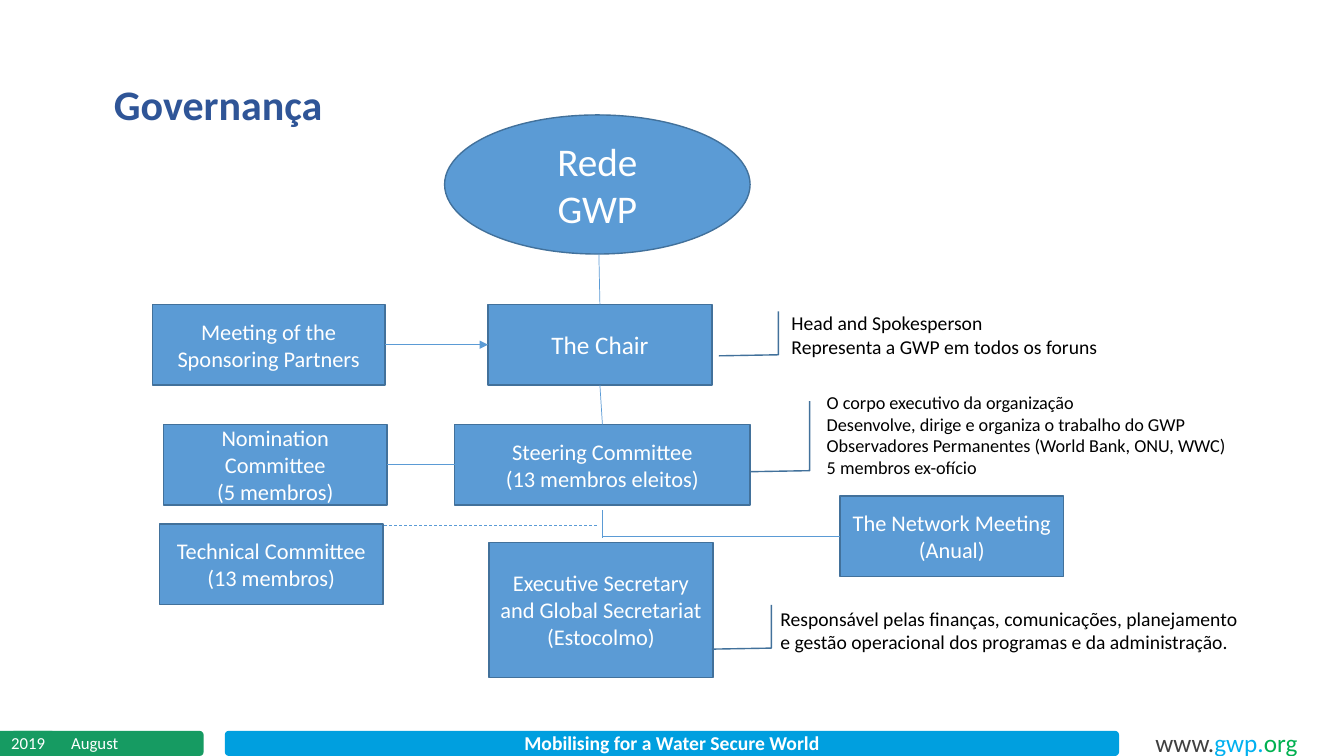
from lxml.etree import SubElement
from pptx import Presentation
from pptx.dml.color import RGBColor
from pptx.enum.dml import MSO_LINE
from pptx.enum.shapes import MSO_CONNECTOR, MSO_SHAPE
from pptx.enum.text import MSO_ANCHOR, PP_ALIGN
from pptx.oxml.ns import qn
from pptx.util import Inches, Pt

# Content
TITLE = "Governança"
SLOGAN = "Mobilising for a Water Secure World"
URL = [("www.", "404040"), ("gwp.", "00B0F0"), ("org", "00B050")]
DATE = [("2019", 0.06, 0.58, PP_ALIGN.LEFT), ("August", 0.42, 1.04, PP_ALIGN.CENTER)]

BLUE, EDGE, WHITE, BLACK = "5B9BD5", "42719B", "FFFFFF", "000000"
GREEN, CYAN, NAVY = "169B62", "009FDF", "2F5597"

# Layout in inches: standard box, and the tops of the rows
W, H = 13.33, 7.5
BOX_W, BOX_H = 2.22, 0.8
ROW_CHAIR, ROW_STEERING = 3.02, 4.21
FOOT_H = 0.25
FOOT_Y = H - FOOT_H
INSET = 0.05

# name: (shape, left, top, width, height, size, lines)
RECT, OVAL = MSO_SHAPE.RECTANGLE, MSO_SHAPE.OVAL
BOXES = {
    "sponsors": (RECT, 1.51, ROW_CHAIR, 2.31, BOX_H, 16,
                 ["Meeting of the Sponsoring Partners"]),
    "nomination": (RECT, 1.62, ROW_STEERING, BOX_W, BOX_H, 16,
                   ["Nomination", "Committee", "(5 membros)"]),
    "secretary": (RECT, 4.85, 5.38, BOX_W, 1.34, 16,
                  ["Executive Secretary and Global Secretariat (Estocolmo)"]),
    "technical": (RECT, 1.58, 5.2, BOX_W, BOX_H, 16,
                  ["Technical Committee", "(13 membros)"]),
    "network": (OVAL, 4.41, 1.14, 3.03, 1.38, 28, ["Rede", "GWP"]),
    "chair": (RECT, 4.84, ROW_CHAIR, BOX_W, BOX_H, 18, ["The Chair"]),
    "steering": (RECT, 4.51, ROW_STEERING, 2.93, BOX_H, 16,
                 ["Steering Committee", "(13 membros eleitos)"]),
    "meeting": (RECT, 8.33, 4.92, BOX_W, BOX_H, 16,
                ["The Network Meeting (Anual)"]),
}

# Each end is a point or a (box, side) pair
TOP, LEFT, BOTTOM, RIGHT = range(4)
LINKS = [
    ((5.94, 2.52), ("chair", TOP), None),
    (("sponsors", RIGHT), ("chair", LEFT), "arrow"),
    (("chair", BOTTOM), ("steering", TOP), None),
    (("steering", LEFT), ("nomination", RIGHT), None),
    ((5.97, 5.06), (5.97, 5.34), None),
    ((5.97, 5.32), ("meeting", LEFT), None),
    ((5.92, 5.21), (3.8, 5.21), "dash"),
]

# Notes: (left, top, width, height, size, lines) and bracket (left, top, height)
NOTES = [
    ((7.8, 3.04, 3.18, 0.57, 14,
      ["Head and Spokesperson", "Representa a GWP em todos os foruns"]),
     (7.13, 3.09, 0.44)),
    ((8.15, 3.83, 4.14, 0.98, 13,
      ["O corpo executivo da organização",
       "Desenvolve, dirige e organiza o trabalho do GWP",
       "Observadores Permanentes (World Bank, ONU, WWC)",
       "5 membros ex-ofício"]),
     (7.44, 3.98, 0.7)),
    ((7.69, 5.97, 4.74, 0.57, 14,
      ["Responsável pelas finanças, comunicações, planejamento",
       "e gestão operacional dos programas e da administração."]),
     (7.06, 6.0, 0.44)),
]
BRACKET_W = 0.59

prs = Presentation()
prs.slide_width, prs.slide_height = Inches(W), Inches(H)
shapes = prs.slides.add_slide(prs.slide_layouts[6]).shapes


def rgb(color):
    return RGBColor.from_string(color)


def write(sp, lines, size, color, align=PP_ALIGN.LEFT, bold=False,
          anchor=MSO_ANCHOR.TOP, wrap=True):
    tf = sp.text_frame
    tf.word_wrap, tf.vertical_anchor = wrap, anchor
    tf.margin_left = tf.margin_right = Inches(INSET)
    tf.margin_top = tf.margin_bottom = Inches(INSET)
    for i, line in enumerate(lines):
        p = tf.add_paragraph() if i else tf.paragraphs[0]
        p.text, p.alignment = line, align
        p.font.name, p.font.size, p.font.bold = "Calibri", Pt(size), bold
        p.font.color.rgb = rgb(color)
    return tf


def add_text(x, y, w, h, lines, size, color, **style):
    box = shapes.add_textbox(*map(Inches, (x, y, w, h)))
    return write(box, lines, size, color, **style)


def add_block(kind, x, y, w, h, fill, edge=None):
    sp = shapes.add_shape(kind, *map(Inches, (x, y, w, h)))
    sp.shadow.inherit = False
    sp.fill.solid()
    sp.fill.fore_color.rgb = rgb(fill)
    if edge:
        sp.line.color.rgb, sp.line.width = rgb(edge), Pt(1)
    else:
        sp.line.fill.background()
    return sp


def add_link(start, end, style):
    points = [(0, 0) if isinstance(e[0], str) else e for e in (start, end)]
    line = shapes.add_connector(MSO_CONNECTOR.STRAIGHT,
                                *(Inches(v) for pt in points for v in pt))
    for end_at, join in ((start, line.begin_connect), (end, line.end_connect)):
        if isinstance(end_at[0], str):
            join(boxes[end_at[0]], end_at[1])
    line.line.color.rgb, line.line.width = rgb(BLUE), Pt(0.5)
    if style == "dash":
        line.line.dash_style = MSO_LINE.DASH
    if style == "arrow":
        SubElement(line.line._get_or_add_ln(), qn("a:tailEnd"), type="triangle")
    SubElement(line._element.spPr, qn("a:effectLst"))


def add_bracket(x, y, h):
    right, bottom = x + BRACKET_W, y + h
    pen = shapes.build_freeform(Inches(right), Inches(y), scale=1.0)
    pen.add_line_segments([(Inches(right), Inches(bottom - 0.01)),
                           (Inches(x), Inches(bottom))], close=False)
    sp = pen.convert_to_shape()
    sp.shadow.inherit = False
    sp.fill.background()
    sp.line.color.rgb, sp.line.width = rgb(EDGE), Pt(1)


# Footer: date, slogan, web address
add_block(MSO_SHAPE.ROUNDED_RECTANGLE, 0.1, FOOT_Y, 1.92, FOOT_H, GREEN)
add_block(RECT, 0, FOOT_Y, 0.52, FOOT_H, GREEN)
for word, x, w, align in DATE:
    add_text(x, 7.22, w, 0.29, [word], 12, WHITE, align=align)
add_block(MSO_SHAPE.ROUNDED_RECTANGLE, 2.23, FOOT_Y, 8.87, FOOT_H, CYAN)
add_text(2.24, 7.21, 8.85, 0.32, [SLOGAN], 14, WHITE, align=PP_ALIGN.CENTER,
         bold=True, anchor=MSO_ANCHOR.MIDDLE)
p = add_text(11.41, 7.12, 1.64, 0.39, [""], 18, BLACK).paragraphs[0]
p.line_spacing = 1.15
for part, color in URL:
    r = p.add_run()
    r.text = part
    r.font.name, r.font.size = "Calibri", Pt(18)
    r.font.color.rgb = rgb(color)

# Title
add_text(1.08, 0.73, 11.5, 0.61, [TITLE], 30, NAVY, align=PP_ALIGN.JUSTIFY, bold=True)

# Organisation chart
boxes = {}
for name, (kind, x, y, w, h, size, lines) in BOXES.items():
    boxes[name] = add_block(kind, x, y, w, h, BLUE, EDGE)
    write(boxes[name], lines, size, WHITE, align=PP_ALIGN.CENTER,
          anchor=MSO_ANCHOR.MIDDLE)
for link in LINKS:
    add_link(*link)

# Notes with their brackets
for (x, y, w, h, size, lines), bracket in NOTES:
    add_bracket(*bracket)
    add_text(x, y, w, h, lines, size, BLACK, wrap=False)

prs.save("out.pptx")
